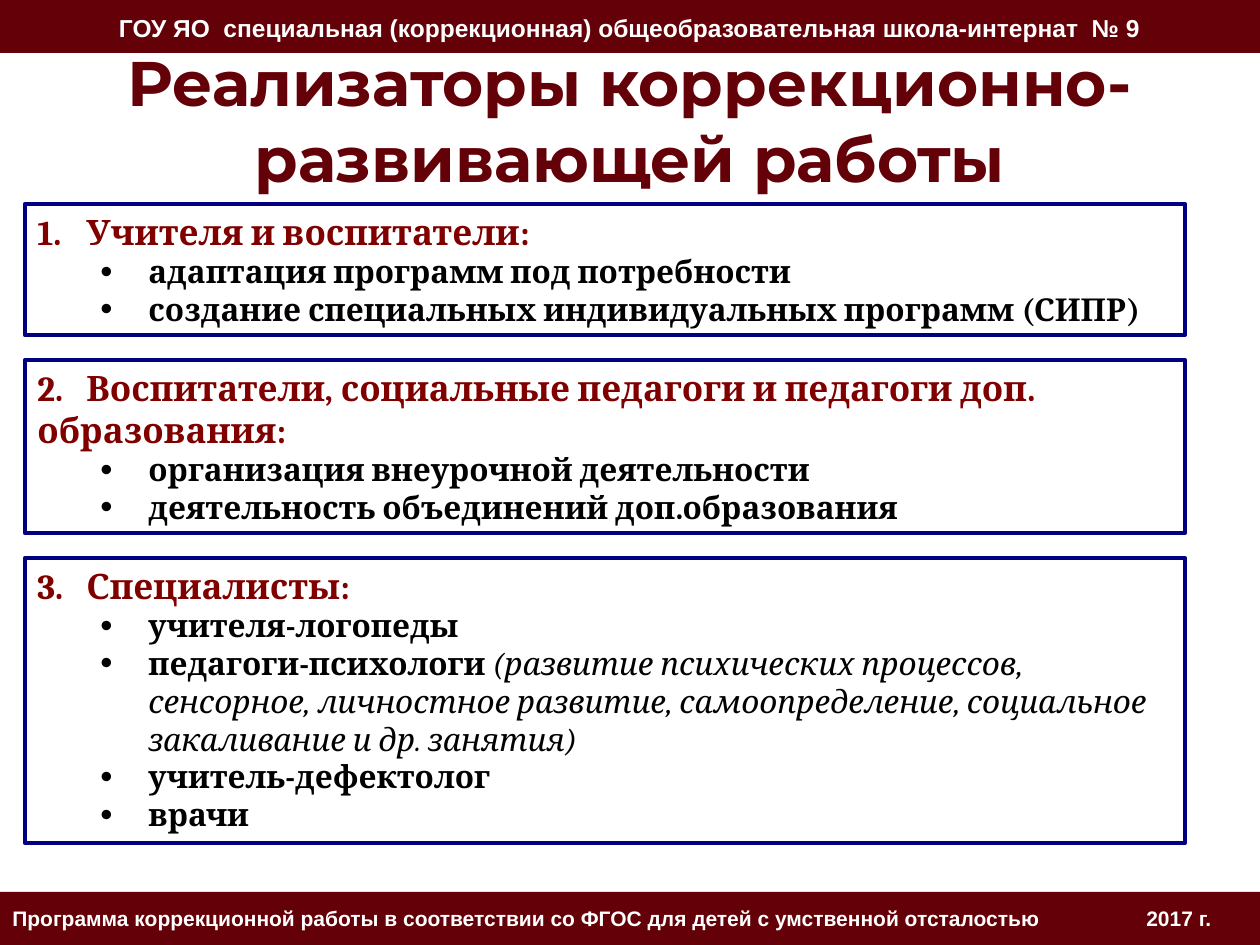
from lxml import etree
from pptx import Presentation
from pptx import util as u
from pptx.dml.color import RGBColor
from pptx.enum import shapes, text
from pptx.oxml import ns

PX = 914400 / 126
WIDE, HIGH = 1260, 945
BAND, LEFT, GAP = 53, 25, 25
COLORS = {"wine": "640007", "white": "FFFFFF", "navy": "000080",
          "head": "800000", "ink": "000000"}
BOXES = [
    (131, "1.\tУчителя и воспитатели:", [
        ("адаптация программ под потребности", ""),
        ("создание специальных индивидуальных программ (СИПР)", ""),
    ]),
    (173, "2.\tВоспитатели, социальные педагоги и педагоги доп. образования:", [
        ("организация внеурочной деятельности", ""),
        ("деятельность объединений доп.образования", ""),
    ]),
    (285, "3.\tСпециалисты:", [
        ("учителя-логопеды", ""),
        ("педагоги-психологи ",
         "(развитие психических процессов, сенсорное, личностное развитие, "
         "самоопределение, социальное закаливание и др. занятия)"),
        ("учитель-дефектолог", ""),
        ("врачи", ""),
    ]),
]


def px(n):
    return u.Emu(round(n * PX))


def color(name):
    return RGBColor.from_string(COLORS[name])


def style(font, face, size, tint, bold=True):
    font.name, font.size, font.bold = face, u.Pt(size), bold
    font.color.rgb = color(tint)


def prepend(para, items):
    props = para._p.get_or_add_pPr()
    for spot, (tag, attrs) in enumerate(items):
        node = etree.Element(ns.qn(tag), attrs)
        props.insert(spot, node)
    return props


def add_tab(para, stop):
    props = prepend(para, [("a:tabLst", {})])
    etree.SubElement(props[0], ns.qn("a:tab"), pos=str(px(stop)), algn="l")


def add_rect(slide, x, y, w, h, fill, line=None):
    rect = slide.shapes.add_shape(shapes.MSO_SHAPE.RECTANGLE,
                                  px(x), px(y), px(w), px(h))
    rect.shadow.inherit = False
    rect.fill.solid()
    rect.fill.fore_color.rgb = color(fill)
    if line:
        rect.line.color.rgb = color(line)
        rect.line.width = u.Pt(2.5)
    else:
        rect.line.fill.background()
    return rect


def add_label(slide, y, h, words, face, size, tint):
    frame = slide.shapes.add_textbox(0, px(y), px(WIDE), px(h)).text_frame
    frame.word_wrap = True
    frame.vertical_anchor = text.MSO_ANCHOR.MIDDLE
    para = frame.paragraphs[0]
    para.text = words
    para.alignment = text.PP_ALIGN.CENTER
    style(para.font, face, size, tint)


def add_footer(slide):
    frame = add_rect(slide, 0, HIGH - BAND, WIDE, BAND, "wine").text_frame
    frame.vertical_anchor = text.MSO_ANCHOR.MIDDLE
    para = frame.paragraphs[0]
    para.text = ("Программа коррекционной работы в соответствии со ФГОС "
                 "для детей с умственной отсталостью\t2017 г.")
    para.alignment = text.PP_ALIGN.LEFT
    style(para.font, "Arial", 12, "white")
    add_tab(para, 1134)


def add_item(frame, words, note):
    para = frame.add_paragraph()
    para.level = 1
    para.alignment = text.PP_ALIGN.LEFT
    props = prepend(para, [("a:buSzPct", {"val": "110000"}),
                           ("a:buFont", {"typeface": "Arial"}),
                           ("a:buChar", {"char": "•"})])
    props.set("marL", str(px(111)))
    props.set("indent", str(px(-48)))
    if not note:
        para.text = words
        style(para.font, "Cambria", 18, "ink")
        return
    for part, bold in ((words, True), (note, False)):
        run = para.add_run()
        run.text = part
        style(run.font, "Cambria", 18, "ink", bold)
        run.font.italic = not bold


def add_box(slide, y, h, head, items):
    frame = add_rect(slide, LEFT, y, 1160, h, "white", "navy").text_frame
    frame.word_wrap = True
    frame.vertical_anchor = text.MSO_ANCHOR.TOP
    para = frame.paragraphs[0]
    para.text = head
    para.alignment = text.PP_ALIGN.LEFT
    style(para.font, "Cambria", 20, "head")
    add_tab(para, 49)
    for words, note in items:
        add_item(frame, words, note)


def main():
    deck = Presentation()
    deck.slide_width, deck.slide_height = px(WIDE), px(HIGH)
    slide = deck.slides.add_slide(deck.slide_layouts[6])
    add_rect(slide, 0, 0, WIDE, BAND, "wine")
    add_footer(slide)
    add_label(slide, 6, 43,
              "ГОУ ЯО  специальная (коррекционная) общеобразовательная "
              "школа-интернат  № 9", "Arial", 14, "white")
    add_label(slide, 55, 129, "Реализаторы коррекционно-развивающей работы",
              "Montserrat", 36, "wine")
    y = 204
    for h, head, items in BOXES:
        add_box(slide, y, h, head, items)
        y += h + GAP
    deck.save("out.pptx")


if __name__ == "__main__":
    main()
